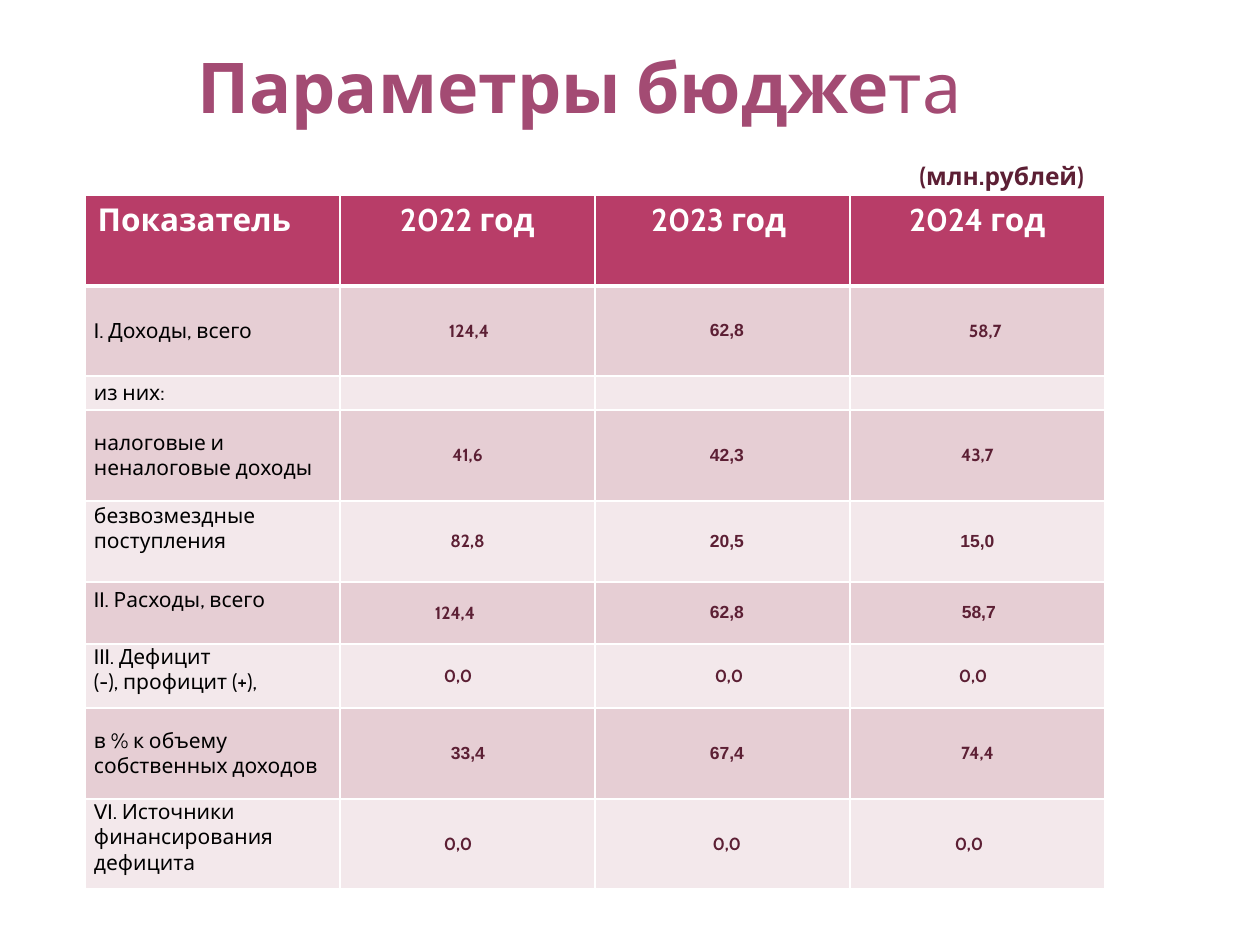
from pptx import Presentation
from pptx.dml.color import RGBColor as Rgb
from pptx.enum.text import MSO_ANCHOR as Anchor, MSO_AUTO_SIZE as AutoSize, PP_ALIGN as Align
from pptx.oxml.ns import qn
from pptx.util import Pt
from lxml.etree import SubElement

PX = 914400 // 126
COLORS = {"title": "A34B73", "header": "B83D68", "dark_row": "E6CED4", "light_row": "F3E8EB",
          "value": "5C1F34", "label": "000000", "white": "FFFFFF"}
CABIN, ARIAL = "Cabin", "Arial"
LEFT, CENTER = Align.LEFT, Align.CENTER


def add_span(para, text, size, color, bold=True, font=CABIN):
    span = para.add_run()
    span.text = text
    span.font.size = Pt(size)
    span.font.bold = bold
    span.font.name = font
    span.font.color.rgb = Rgb.from_string(COLORS[color])


def style_cell(cell, fill, bottom_width=1):
    props = cell._tc.get_or_add_tcPr()
    for side in ("lnL", "lnR", "lnT", "lnB"):
        width = bottom_width if side == "lnB" else 1
        line = SubElement(props, qn(f"a:{side}"), w=str(Pt(width)))
        solid = SubElement(line, qn("a:solidFill"))
        SubElement(solid, qn("a:srgbClr"), val=COLORS["white"])
    cell.fill.solid()
    cell.fill.fore_color.rgb = Rgb.from_string(COLORS[fill])


deck = Presentation()
deck.slide_width, deck.slide_height = 1260 * PX, 945 * PX
page = deck.slides.add_slide(deck.slide_layouts[6])

# Title and unit note
boxes = [
    (44, 37, 1071, 97, CENTER, 40, "title", [("Параметры бюдже", True), ("та", False)]),
    (907, 155, 198, 43, LEFT, 14, "value", [("(млн.рублей)", True)]),
]
for left, top, width, height, align, size, color, spans in boxes:
    box = page.shapes.add_textbox(left * PX, top * PX, width * PX, height * PX)
    box.text_frame.word_wrap = True
    box.text_frame.auto_size = AutoSize.SHAPE_TO_FIT_TEXT
    para = box.text_frame.paragraphs[0]
    para.alignment = align
    for text, bold in spans:
        add_span(para, text, size, color, bold)

# Table content: label lines, top inset (None centres the label),
# then values as (text, font, alignment, first-line indent)
headers = ["Показатель", "2022 год", "2023 год ", "2024 год"]
rows = [
    (["I. Доходы, всего"], None,
     [("124,4", CABIN, CENTER, 3), ("62,8", ARIAL, CENTER, 9), ("58,7", CABIN, LEFT, 110)]),
    (["из них:"], None, [None, None, None]),
    (["налоговые и неналоговые доходы"], None,
     [("41,6", CABIN, CENTER, 0), ("42,3", ARIAL, CENTER, 9), ("43,7", CABIN, CENTER, 0)]),
    (["безвозмездные поступления"], 2,
     [("82,8", CABIN, CENTER, 0), ("20,5", ARIAL, CENTER, 9), ("15,0", ARIAL, CENTER, 0)]),
    (["II. Расходы, всего"], 5,
     [("124,4", CABIN, LEFT, 86), ("62,8", ARIAL, CENTER, 9), ("58,7", ARIAL, LEFT, 103)]),
    (["III. Дефицит", "(-), профицит (+),"], 0,
     [("0,0", CABIN, LEFT, 95), ("0,0", CABIN, CENTER, 13), ("0,0", CABIN, LEFT, 100)]),
    (["в % к объему собственных доходов"], None,
     [("33,4", ARIAL, LEFT, 102), ("67,4", ARIAL, CENTER, 9), ("74,4", CABIN, CENTER, 0)]),
    (["VI. Источники финансирования дефицита"], 0,
     [("0,0", CABIN, LEFT, 95), ("0,0", CABIN, CENTER, 9), ("0,0", CABIN, LEFT, 96)]),
]
row_heights = [91, 90, 34, 91, 81, 62, 64, 91, 90]

table = page.shapes.add_table(len(row_heights), len(headers), 85 * PX, 195 * PX,
                              1020 * PX, sum(row_heights) * PX).table
for column in table.columns:
    column.width = 255 * PX
for row, height in zip(table.rows, row_heights):
    row.height = height * PX

# Header row
for index, text in enumerate(headers):
    cell = table.cell(0, index)
    style_cell(cell, "header", 3)
    para = cell.text_frame.paragraphs[0]
    para.alignment = CENTER if index else LEFT
    add_span(para, text, 18, "white")

# Body rows
for number, (lines, inset, values) in enumerate(rows, 1):
    for index in range(len(headers)):
        cell = table.cell(number, index)
        style_cell(cell, "dark_row" if number % 2 else "light_row")
        cell.margin_left = cell.margin_right = 9 * PX
        cell.margin_top = cell.margin_bottom = 0
        cell.vertical_anchor = Anchor.MIDDLE

    label = table.cell(number, 0)
    if inset is not None:
        label.vertical_anchor = Anchor.TOP
        label.margin_top = inset * PX
    for position, line in enumerate(lines):
        frame = label.text_frame
        para = frame.add_paragraph() if position else frame.paragraphs[0]
        add_span(para, line, 12, "label", False)

    for index, value in enumerate(values, 1):
        para = table.cell(number, index).text_frame.paragraphs[0]
        if value is None:
            SubElement(para._p, qn("a:endParaRPr"), sz="1000")
            continue
        text, font, align, indent = value
        para.alignment = align
        para._p.get_or_add_pPr().set("indent", str(indent * PX))
        add_span(para, text, 10, "value", font=font)

deck.save("out.pptx")
